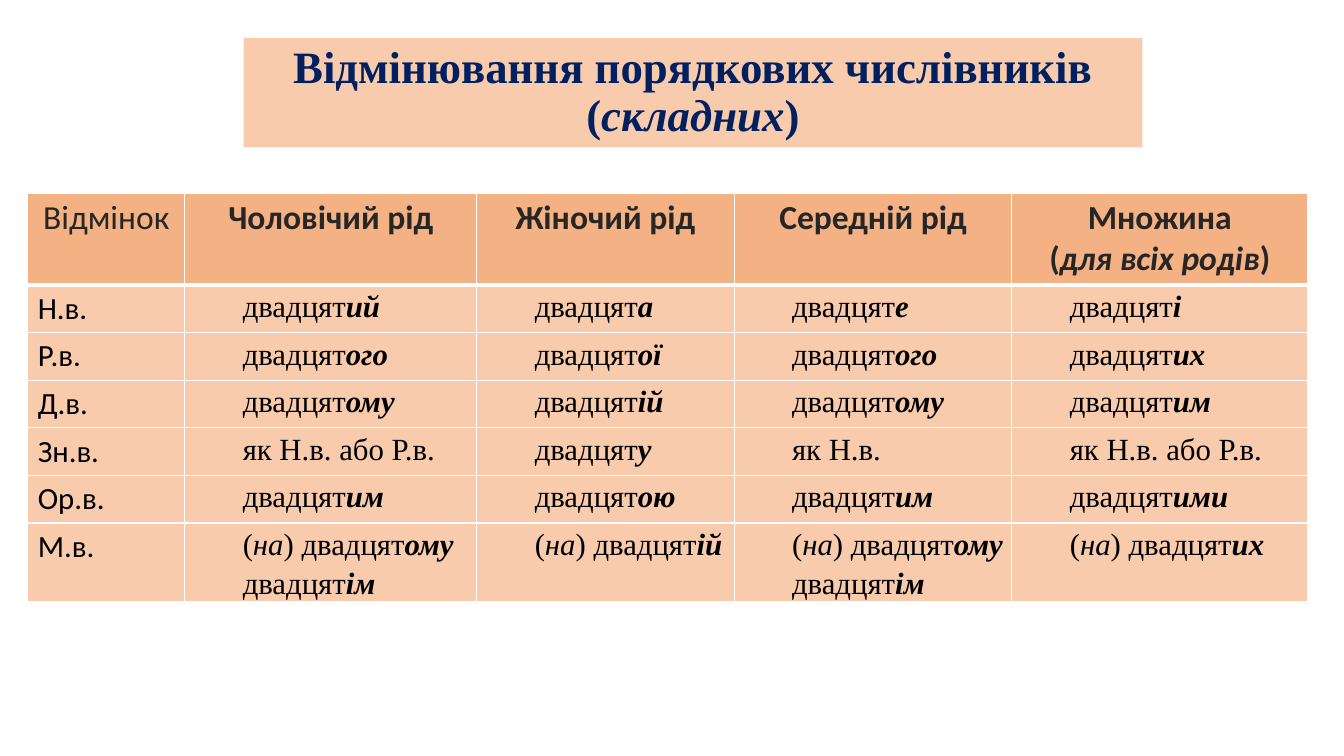
from lxml.etree import SubElement
from pptx import Presentation
from pptx.dml.color import RGBColor
from pptx.enum.text import MSO_ANCHOR as Anchor, MSO_AUTO_SIZE as AutoSize, PP_ALIGN as Align
from pptx.oxml.ns import qn
from pptx.util import Pt

SERIF, SANS = "Times New Roman", "Calibri"
PEACH, ORANGE, WHITE = "F8CBAD", "F4B183", "FFFFFF"
NAVY, CHARCOAL, BLACK = "002060", "262626", "000000"

TITLE = "Відмінювання порядкових числівників (_складних_)"
COLUMN_WIDTHS = [112.2, 208.6, 183.8, 198.4, 211.4]
ROW_HEIGHTS = [65.5] + [34] * 5 + [55.5]
HEADINGS = ["Відмінок", "Чоловічий рід", "Жіночий рід", "Середній рід",
            "Множина\n(_для всіх родів_)"]
CASES = [
    ["Н.в.", "двадцят*ий*", "двадцят*а*", "двадцят*е*", "двадцят*і*"],
    ["Р.в.", "двадцят*ого*", "двадцят*ої*", "двадцят*ого*", "двадцят*их*"],
    ["Д.в.", "двадцят*ому*", "двадцят*ій*", "двадцят*ому*", "двадцят*им*"],
    ["Зн.в.", "як Н.в. або Р.в.", "двадцят*у*", "як Н.в.", "як Н.в. або Р.в."],
    ["Ор.в.", "двадцят*им*", "двадцят*ою*", "двадцят*им*", "двадцят*ими*"],
    ["М.в.", "(_на_) двадцят*ому*\nдвадцят*ім*", "(_на_) двадцят*ій*",
     "(_на_) двадцят*ому*\nдвадцят*ім*", "(_на_) двадцят*их*"],
]


def color(value):
    return RGBColor.from_string(value)


def write(frame, text, font, size, ink, bold=False, align=Align.LEFT, spacing=None, indent=0):
    """Fill a text frame; *x* is bold italic, _x_ is italic, a line break starts a paragraph."""
    for number, line in enumerate(text.split("\n")):
        para = frame.add_paragraph() if number else frame.paragraphs[0]
        para.alignment = align
        if spacing:
            para.line_spacing = spacing
        if indent:
            properties = para._p.get_or_add_pPr()
            properties.set("marL", str(Pt(indent)))
            properties.set("indent", "0")
        for i, part in enumerate(line.split("*")):
            for j, piece in enumerate(part.split("_")):
                if not piece:
                    continue
                span = para.add_run()
                span.text = piece
                span.font.name = font
                span.font.size = Pt(size)
                span.font.color.rgb = color(ink)
                span.font.bold = bold or i % 2 == 1
                span.font.italic = i % 2 == 1 or j % 2 == 1


def add_title(slide, left, top, width, height):
    title = slide.shapes.title
    title.left, title.top, title.width, title.height = map(Pt, (left, top, width, height))
    title.fill.solid()
    title.fill.fore_color.rgb = color(PEACH)
    frame = title.text_frame
    frame.word_wrap = True
    frame.auto_size = AutoSize.NONE
    frame.vertical_anchor = Anchor.MIDDLE
    write(frame, TITLE, SERIF, 32, NAVY, True, Align.CENTER, 0.9)


def style_cell(cell, fill, side, edge, bottom_line=1):
    """Set fill, borders and insets; side and edge are the horizontal and vertical insets."""
    properties = cell._tc.get_or_add_tcPr()
    for tag, weight in (("lnL", 1), ("lnR", 1), ("lnT", 1), ("lnB", bottom_line)):
        line = SubElement(properties, qn("a:" + tag), w=str(Pt(weight)))
        SubElement(SubElement(line, qn("a:solidFill")), qn("a:srgbClr"), val=WHITE)
    cell.fill.solid()
    cell.fill.fore_color.rgb = color(fill)
    cell.margin_left = cell.margin_right = Pt(side)
    cell.margin_top = cell.margin_bottom = Pt(edge)


def add_case_table(slide, left, top):
    box = slide.shapes.add_table(len(ROW_HEIGHTS), len(COLUMN_WIDTHS), Pt(left), Pt(top),
                                 Pt(sum(COLUMN_WIDTHS)), Pt(sum(ROW_HEIGHTS)))
    table = box.table
    table.horz_banding = False
    for column, width in zip(table.columns, COLUMN_WIDTHS):
        column.width = Pt(width)
    for row, height in zip(table.rows, ROW_HEIGHTS):
        row.height = Pt(height)
    for c, heading in enumerate(HEADINGS):
        cell = table.cell(0, c)
        style_cell(cell, ORANGE, 7.2, 3.6, 3)
        write(cell.text_frame, heading, SANS, 24, CHARCOAL, c > 0, Align.CENTER)
    for r, forms in enumerate(CASES, 1):
        for c, form in enumerate(forms):
            cell = table.cell(r, c)
            if c == 0:
                style_cell(cell, PEACH, 7.2, 3.6)
                write(cell.text_frame, form, SANS, 22, BLACK)
            else:
                style_cell(cell, PEACH, 5.4, 0)
                align = Align.LEFT if c == 1 else Align.JUSTIFY
                write(cell.text_frame, form, SERIF, 22, BLACK, False, align, 1.15, 36)


def main():
    deck = Presentation()
    deck.slide_width, deck.slide_height = Pt(960), Pt(540)
    slide = deck.slides.add_slide(deck.slide_layouts[5])
    add_title(slide, 174, 27.2, 642, 78)
    add_case_table(slide, 19.8, 137.8)
    deck.save("out.pptx")


if __name__ == "__main__":
    main()
